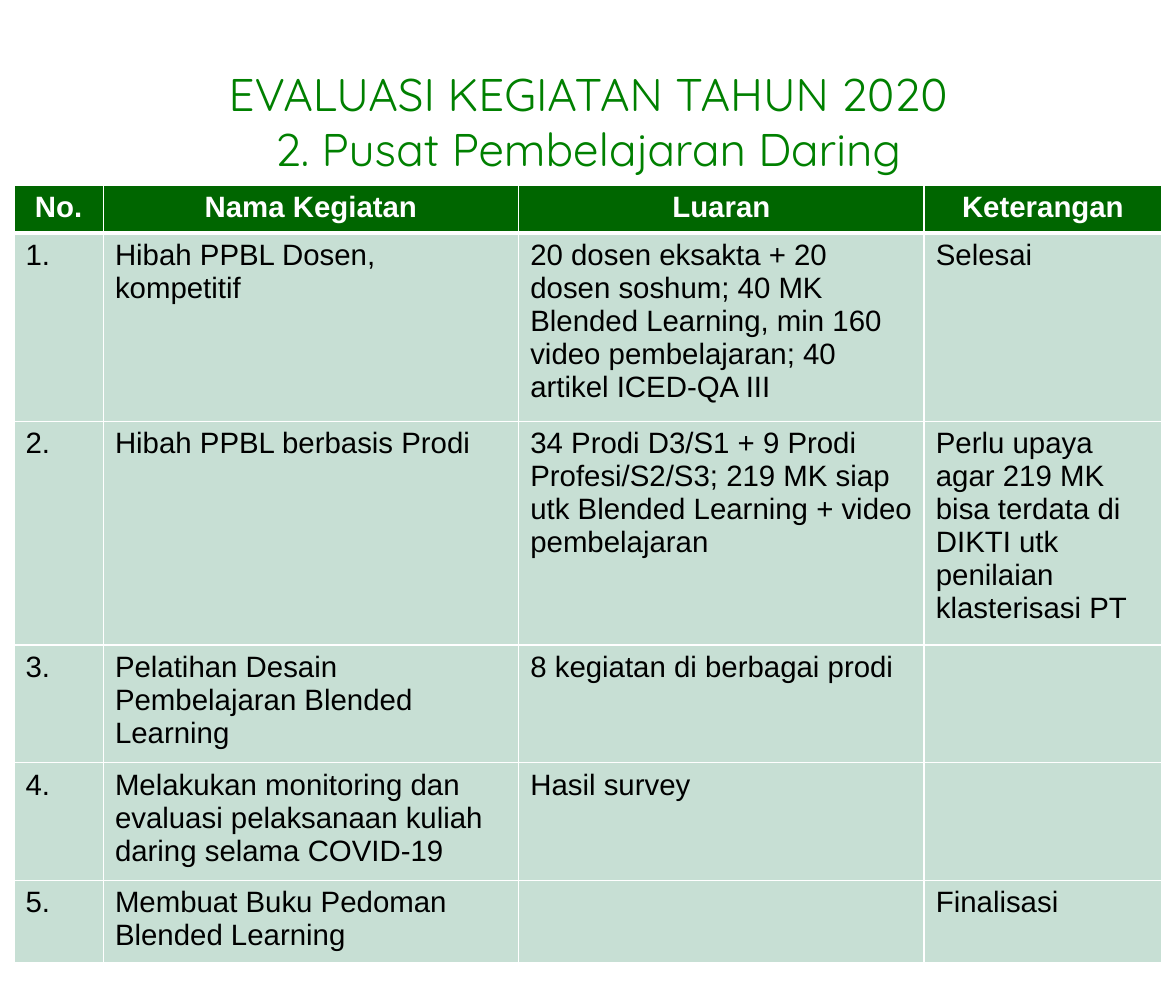
import pptx
import pptx.util
import pptx.dml.color
import pptx.enum.text
import pptx.oxml
import pptx.oxml.ns
from pptx.util import Cm

GREEN = pptx.dml.color.RGBColor(0x00, 0x80, 0x00)
DARK_GREEN = pptx.dml.color.RGBColor(0x00, 0x66, 0x00)
PALE_GREEN = pptx.dml.color.RGBColor(0xC7, 0xDF, 0xD4)
WHITE = pptx.dml.color.RGBColor(0xFF, 0xFF, 0xFF)
BLACK = pptx.dml.color.RGBColor(0x00, 0x00, 0x00)
CENTER = pptx.enum.text.PP_ALIGN.CENTER
LEFT = pptx.enum.text.PP_ALIGN.LEFT


def add_span(para, text, font, size, color, bold=False):
    span = para.add_run()
    span.text = text
    span.font.name = font
    span.font.size = pptx.util.Pt(size)
    span.font.color.rgb = color
    span.font.bold = bold


def add_border(cell, side, points):
    cell._tc.get_or_add_tcPr().append(pptx.oxml.parse_xml(
        f'<a:ln{side} {pptx.oxml.ns.nsdecls("a")} w="{points * 12700}">'
        f'<a:solidFill><a:srgbClr val="{WHITE}"/></a:solidFill></a:ln{side}>'))


deck = pptx.Presentation()
deck.slide_width = Cm(25.4)
deck.slide_height = Cm(21.59)
page = deck.slides.add_slide(deck.slide_layouts[6])

title_box = page.shapes.add_textbox(Cm(1.27), Cm(1.6), Cm(22.86), Cm(2.01))
title_box.text_frame.word_wrap = True
title_box.text_frame.vertical_anchor = pptx.enum.text.MSO_ANCHOR.MIDDLE
para = title_box.text_frame.paragraphs[0]
para.alignment = CENTER
add_span(para, "EVALUASI KEGIATAN TAHUN 2020", "Quicksand", 28, GREEN)
para.add_line_break()
add_span(para, "2. Pusat Pembelajaran Daring", "Quicksand", 28, GREEN)

activities = [
    ["No.", "Nama Kegiatan", "Luaran", "Keterangan"],
    ["1.", "Hibah PPBL Dosen, kompetitif",
     "20 dosen eksakta + 20 dosen soshum; 40 MK Blended Learning, "
     "min 160 video pembelajaran; 40 artikel ICED-QA III", "Selesai"],
    ["2.", "Hibah PPBL berbasis Prodi",
     "34 Prodi D3/S1 + 9 Prodi Profesi/S2/S3; 219 MK siap utk "
     "Blended Learning + video pembelajaran",
     "Perlu upaya agar 219 MK bisa terdata di DIKTI utk penilaian klasterisasi PT"],
    ["3.", "Pelatihan Desain Pembelajaran Blended Learning",
     "8 kegiatan di berbagai prodi", ""],
    ["4.", "Melakukan monitoring dan evaluasi pelaksanaan kuliah daring selama COVID-19",
     "Hasil survey", ""],
    ["5.", "Membuat Buku Pedoman Blended Learning", "", "Finalisasi"],
]
column_widths = [1.93, 8.97, 8.76, 5.13]
row_heights = [1.04, 4.06, 4.83, 2.54, 2.54, 1.78]

table = page.shapes.add_table(
    len(row_heights), len(column_widths), Cm(0.3), Cm(3.99),
    Cm(sum(column_widths)), Cm(sum(row_heights))).table
for column, width in zip(table.columns, column_widths):
    column.width = Cm(width)
for row, height in zip(table.rows, row_heights):
    row.height = Cm(height)

for row_index, texts in enumerate(activities):
    header = row_index == 0
    for column_index, text in enumerate(texts):
        cell = table.cell(row_index, column_index)
        add_border(cell, "L", 1)
        add_border(cell, "R", 1)
        add_border(cell, "T", 3 if row_index == 1 else 1)
        add_border(cell, "B", 3 if header else 1)
        cell.fill.solid()
        cell.fill.fore_color.rgb = DARK_GREEN if header else PALE_GREEN
        if text:
            para = cell.text_frame.paragraphs[0]
            para.alignment = CENTER if header else LEFT
            add_span(para, text, "Arial", 18, WHITE if header else BLACK, header)

deck.save("out.pptx")
